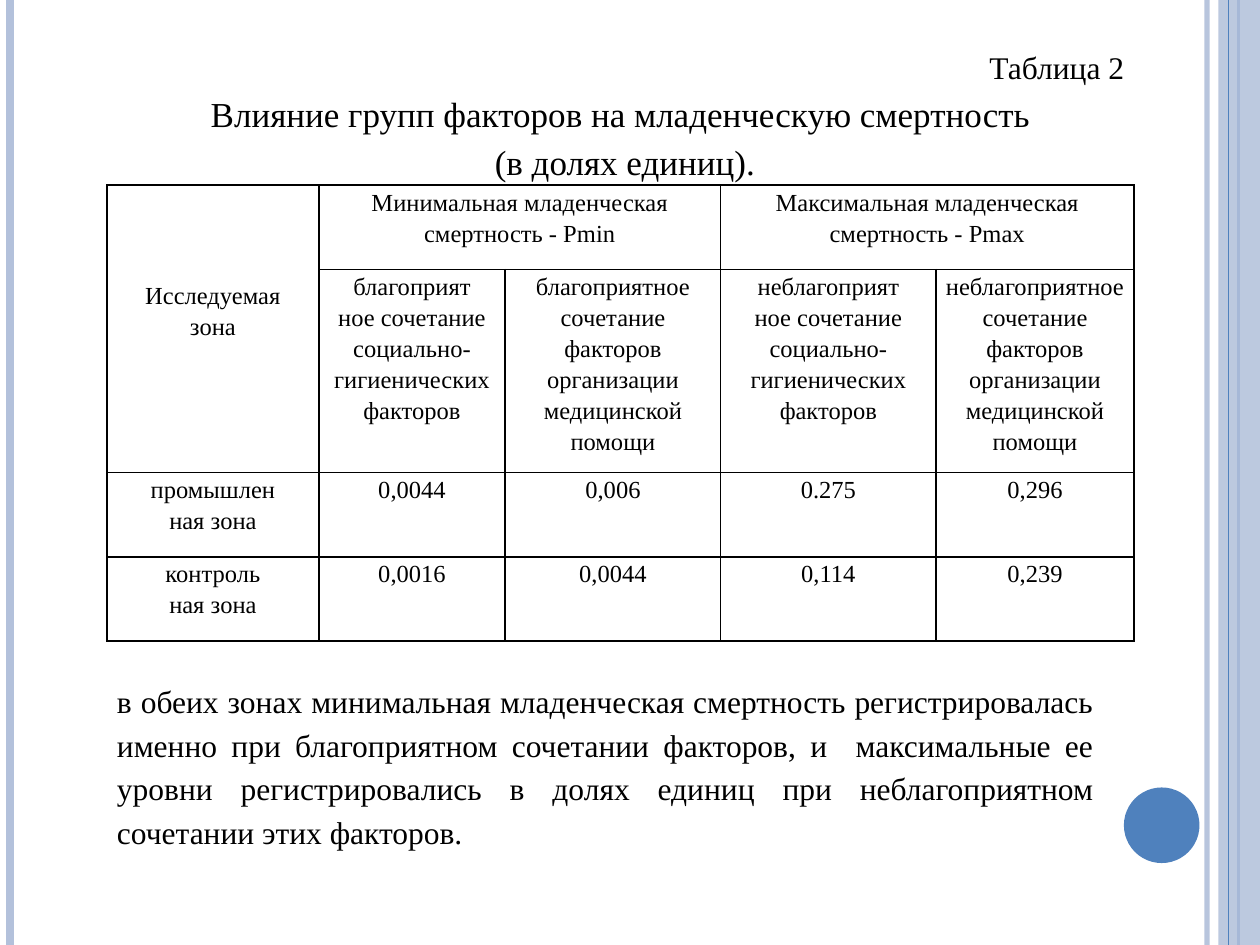
from lxml import etree
from pptx import Presentation
from pptx.dml.color import RGBColor
from pptx.enum.shapes import MSO_CONNECTOR, MSO_SHAPE
from pptx.enum.text import PP_ALIGN
from pptx.oxml import parse_xml
from pptx.oxml.ns import nsdecls, qn
from pptx.util import Inches, Pt

LEFT, MID, RIGHT, JUST = PP_ALIGN.LEFT, PP_ALIGN.CENTER, PP_ALIGN.RIGHT, PP_ALIGN.JUSTIFY
LINE = MSO_CONNECTOR.STRAIGHT
RECT, OVAL = MSO_SHAPE.RECTANGLE, MSO_SHAPE.OVAL
PALE, BLUE, BLACK = "B3C1DB", "4F81BD", "000000"


def rgb(code):
    return RGBColor.from_string(code)


def style(par, size, align):
    par.alignment = align
    par.line_spacing = 1.15
    for run in par.runs:
        run.font.size = Pt(size)
        run.font.name = "Times New Roman"
        run.font.color.rgb = rgb(BLACK)


prs = Presentation()
prs.slide_width, prs.slide_height = Inches(10), Inches(7.5)
slide = prs.slides.add_slide(prs.slide_layouts[6])
shapes = slide.shapes

# Side band and dot, with the vertical rules around them
band = shapes.add_shape(RECT, Inches(9.67), 0, Inches(0.33), Inches(7.5))
dot = shapes.add_shape(OVAL, Inches(8.92), Inches(6.25), Inches(0.6), Inches(0.6))
for shape, color in ((band, PALE), (dot, BLUE)):
    shape.shadow.inherit = False
    shape.fill.solid()
    shape.fill.fore_color.rgb = rgb(color)
    shape.line.fill.background()

rules = []
for x, color, width in ((9.58, PALE, 3), (0.08, PALE, 4.5), (9.83, BLUE, 1.5), (9.75, BLUE, 0.75)):
    rule = shapes.add_connector(LINE, Inches(x), 0, Inches(x), Inches(7.5))
    rule.line.color.rgb = rgb(color)
    rule.line.width = Pt(width)
    etree.SubElement(rule._element.spPr, qn("a:effectLst"))
    rules.append(rule)

# The thick blue rule lies under the half-clear band
band._element.addprevious(rules[2]._element)
for shape, alpha in ((band, 87), (rules[0], 93)):
    tint = next(shape._element.spPr.iter(qn("a:srgbClr")))
    etree.SubElement(tint, qn("a:alpha"), val=str(alpha * 1000))

# Heading and closing text
title = (
    ("Таблица 2", 18, RIGHT),
    ("Влияние групп факторов на младенческую смертность", 20, MID),
    (" (в долях единиц).", 20, MID),
)
note = ((
    "в обеих зонах минимальная младенческая смертность регистрировалась "
    "именно при благоприятном сочетании факторов, и  максимальные ее "
    "уровни регистрировались в долях единиц при неблагоприятном "
    "сочетании этих факторов.", 18, JUST),)
for top, width, height, lines in ((0.29, 8.19, 1.22, title), (5.32, 7.95, 1.49, note)):
    box = shapes.add_textbox(Inches(0.83), Inches(top), Inches(width), Inches(height))
    frame = box.text_frame
    frame.word_wrap = True
    frame.text = "\n".join(line[0] for line in lines)
    for par, (_, size, align) in zip(frame.paragraphs, lines):
        style(par, size, align)

# Table
social = "ное сочетание социально-гигиенических факторов"
care = "благоприятное сочетание факторов организации медицинской помощи"
rows = (
    ("Исследуемая\nзона", "Минимальная младенческая смертность - Рmin", "",
     "Максимальная младенческая смертность - Рmax", ""),
    ("", "благоприят\n" + social, care, "неблагоприят\n" + social, "не" + care),
    ("промышлен\nная зона", "0,0044", "0,006", "0.275", "0,296"),
    ("контроль\nная зона", "0,0016", "0,0044", "0,114", "0,239"),
)
widths = (1.68, 1.48, 1.71, 1.71, 1.57)
heights = (0.67, 1.61, 0.67, 0.67)
table = shapes.add_table(
    len(rows), len(widths), Inches(0.85), Inches(1.47),
    Inches(sum(widths)), Inches(sum(heights))).table
table.first_row = table.horz_banding = False
for col, width in zip(table.columns, widths):
    col.width = Inches(width)
for row, height in zip(table.rows, heights):
    row.height = Inches(height)

for r, row in enumerate(rows):
    for c, text in enumerate(row):
        cell = table.cell(r, c)
        cell.margin_left = cell.margin_right = Inches(0.07)
        cell.margin_top = cell.margin_bottom = 0
        cell.fill.background()
        cell.text_frame.text = text
        for par in cell.text_frame.paragraphs:
            style(par, 14, MID)
        props = cell._tc.get_or_add_tcPr()
        for i, side in enumerate("LRTB"):
            props.insert(i, parse_xml(
                f'<a:ln{side} {nsdecls("a")} w="12700"><a:solidFill>'
                f'<a:srgbClr val="{BLACK}"/></a:solidFill></a:ln{side}>'))

# Merged headers; the zone label sits lower in its tall cell
table.cell(0, 0).merge(table.cell(1, 0))
table.cell(0, 1).merge(table.cell(0, 2))
table.cell(0, 3).merge(table.cell(0, 4))
table.cell(0, 0).margin_top = Inches(0.74)

prs.save("out.pptx")
